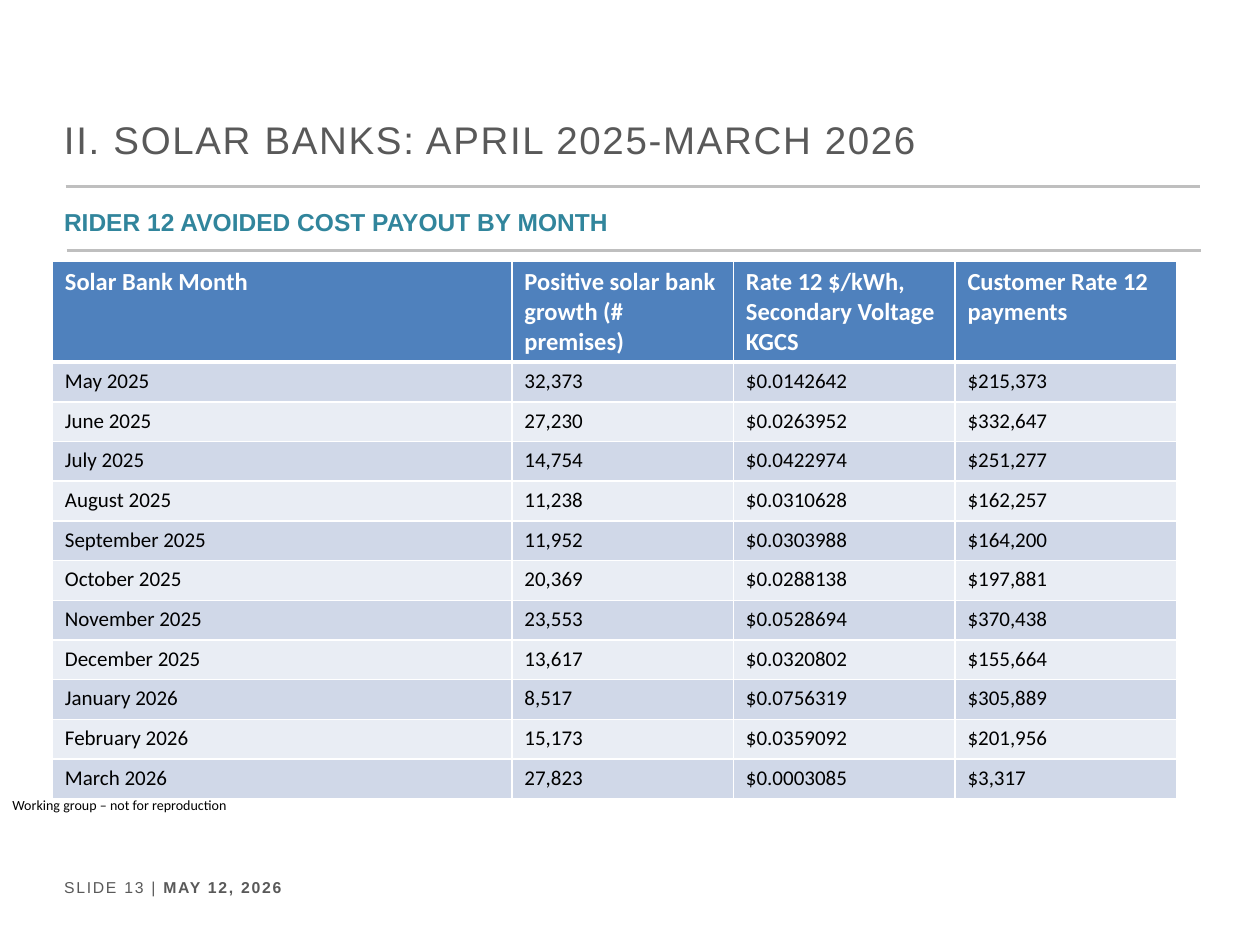
from lxml import etree
from pptx import Presentation
from pptx.dml.color import RGBColor
from pptx.enum import shapes, text
from pptx.oxml.ns import qn
from pptx.util import Pt

GREY, TEAL, RULE = "595959", "31859C", "BFBFBF"
WHITE, BLACK, HEADER_BLUE = "FFFFFF", "000000", "4F81BD"
BANDS = ("D0D8E8", "E9EDF4")

COLUMN_WIDTHS = (262.6, 126.6, 126.6, 126.6)
HEADER_HEIGHT, ROW_HEIGHT = 53.4, 22.68
HEADINGS = ("Solar Bank Month", "Positive solar bank growth (# premises)",
            "Rate 12 $/kWh, Secondary Voltage KGCS", "Customer Rate 12 payments")
PAYOUTS = (
    ("May 2025", "32,373", "$0.0142642", "$215,373"),
    ("June 2025", "27,230", "$0.0263952", "$332,647"),
    ("July 2025", "14,754", "$0.0422974", "$251,277"),
    ("August 2025", "11,238", "$0.0310628", "$162,257"),
    ("September 2025", "11,952", "$0.0303988", "$164,200"),
    ("October 2025", "20,369", "$0.0288138", "$197,881"),
    ("November 2025", "23,553", "$0.0528694", "$370,438"),
    ("December 2025", "13,617", "$0.0320802", "$155,664"),
    ("January 2026", "8,517", "$0.0756319", "$305,889"),
    ("February 2026", "15,173", "$0.0359092", "$201,956"),
    ("March 2026", "27,823", "$0.0003085", "$3,317"),
)


def color(hex_value):
    return RGBColor.from_string(hex_value)


def style(font, name, size, hex_value, bold=None):
    font.name, font.size, font.bold = name, Pt(size), bold
    font.color.rgb = color(hex_value)


def add_rule(slide, left, top, width):
    rule = slide.shapes.add_connector(
        shapes.MSO_CONNECTOR.STRAIGHT, Pt(left), Pt(top), Pt(left + width), Pt(top))
    rule.line.color.rgb = color(RULE)
    rule.line.width = Pt(1.5)
    etree.SubElement(rule._element.spPr, qn("a:effectLst"))


def add_text(slide, box, runs, font, size, hex_value, bold=None,
             tracking=0, middle=False, line_spacing=None):
    """Add one paragraph; runs holds (wording, bold) pairs."""
    frame = slide.shapes.add_textbox(*map(Pt, box)).text_frame
    frame.word_wrap = True
    if middle:
        frame.vertical_anchor = text.MSO_ANCHOR.MIDDLE
    paragraph = frame.paragraphs[0]
    paragraph.line_spacing = line_spacing
    style(paragraph.font, font, size, hex_value, bold)
    for wording, run_bold in runs:
        run = paragraph.add_run()
        run.text = wording
        run.font.bold = run_bold
        if tracking:
            run.font._element.set("spc", str(tracking * 100))


def set_borders(cell, top=1, bottom=1):
    properties = cell._tc.get_or_add_tcPr()
    for side, width in (("L", 1), ("R", 1), ("T", top), ("B", bottom)):
        line = etree.SubElement(properties, qn(f"a:ln{side}"), w=str(Pt(width)))
        fill = etree.SubElement(line, qn("a:solidFill"))
        etree.SubElement(fill, qn("a:srgbClr"), val=WHITE)


def fill_cell(cell, wording, fill, size, hex_value, bold, **borders):
    set_borders(cell, **borders)
    cell.fill.solid()
    cell.fill.fore_color.rgb = color(fill)
    cell.text = wording
    style(cell.text_frame.paragraphs[0].font, "Calibri", size, hex_value, bold)


def add_payout_table(slide, left, top):
    height = HEADER_HEIGHT + ROW_HEIGHT * len(PAYOUTS)
    table = slide.shapes.add_table(
        len(PAYOUTS) + 1, len(HEADINGS), Pt(left), Pt(top),
        Pt(sum(COLUMN_WIDTHS)), Pt(height)).table
    for column, width in zip(table.columns, COLUMN_WIDTHS):
        column.width = Pt(width)
    for row in table.rows:
        row.height = Pt(ROW_HEIGHT)
    table.rows[0].height = Pt(HEADER_HEIGHT)

    for c, heading in enumerate(HEADINGS):
        fill_cell(table.cell(0, c), heading, HEADER_BLUE, 14, WHITE, True, bottom=3)
    for r, payout in enumerate(PAYOUTS):
        for c, value in enumerate(payout):
            fill_cell(table.cell(r + 1, c), value, BANDS[r % 2], 12, BLACK, False,
                      top=3 if r == 0 else 1)


def main():
    prs = Presentation()
    prs.slide_width, prs.slide_height = Pt(720), Pt(540)
    slide = prs.slides.add_slide(prs.slide_layouts[6])

    # Rules and footer
    add_rule(slide, 37.5, 106.5, 648)
    add_rule(slide, 38.2, 143.3, 648)
    add_text(slide, (29.5, 498.2, 193, 18),
             [("SLIDE 13 | ", None), ("MAY 12, 2026", True)],
             "Arial", 9, GREY, tracking=1)

    # Title and subtitle
    add_text(slide, (29.5, 58.5, 656, 42),
             [("II. SOLAR BANKS: APRIL 2025-MARCH 2026", None)],
             "Arial", 22, GREY, tracking=1, middle=True)
    add_text(slide, (29.5, 108, 655, 34),
             [("RIDER 12 AVOIDED COST PAYOUT BY MONTH", None)],
             "Arial", 14, TEAL, bold=True, middle=True, line_spacing=1.2)

    # Monthly payouts and note
    add_payout_table(slide, 29.9, 149.3)
    add_text(slide, (0, 451.5, 138, 17),
             [("Working group – not for reproduction", None)], "Calibri", 8, BLACK)

    prs.save("out.pptx")


if __name__ == "__main__":
    main()
